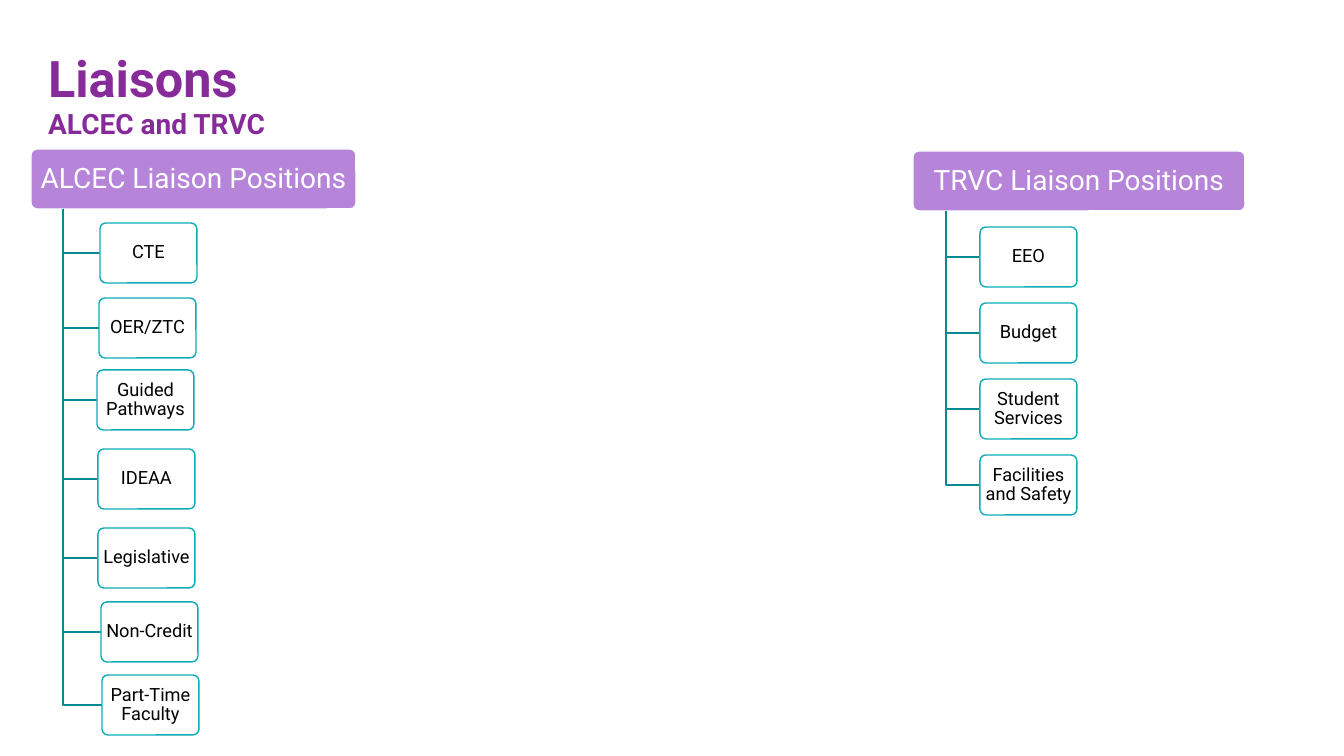
import dataclasses

import pptx
import pptx.dml.color
import pptx.enum.shapes
import pptx.enum.text
import pptx.oxml
import pptx.oxml.ns
import pptx.util

SCALE = 12192000 / 1344  # EMU in one px
BOX_W, BOX_H = 97, 60


@dataclasses.dataclass(frozen=True)
class Theme:
    font: str = "Roboto"
    title: str = "862B99"
    head: str = "B685DA"
    white: str = "FFFFFF"
    black: str = "000000"
    edge: str = "0EABB7"
    branch: str = "0B8993"
    title_size: int = 36
    head_size: int = 20
    box_size: int = 13


THEME = Theme()

STATE = [
    ("CTE", 100, 223),
    ("OER/ZTC", 99, 298),
    ("Guided Pathways", 97, 370),
    ("IDEAA", 98, 449),
    ("Legislative", 98, 528),
    ("Non-Credit", 101, 602),
    ("Part-Time Faculty", 102, 675),
]
CAMPUS = [
    (name, 980, 227 + 76 * row)
    for row, name in enumerate(
        ["EEO", "Budget", "Student Services", "Facilities and Safety"])
]


def px(count):
    return pptx.util.Emu(round(count * SCALE))


def rgb(color):
    return pptx.dml.color.RGBColor.from_string(color)


def style_text(para, size, color, bold=False, spacing=0.9):
    para.font.name = THEME.font
    para.font.size = pptx.util.Pt(size)
    para.font.color.rgb = rgb(color)
    para.font.bold = bold
    para.line_spacing = spacing


def style_line(shape, color):
    shape.shadow.inherit = False
    shape.line.color.rgb = rgb(color)
    shape.line.width = pptx.util.Pt(1)


def fill_holder(holder, text, place, size, spacing):
    """Move a placeholder, then set its left-aligned bold text."""
    holder.left, holder.top, holder.width, holder.height = map(px, place)
    frame = holder.text_frame
    frame.text = text
    frame.auto_size = pptx.enum.text.MSO_AUTO_SIZE.NONE
    para = frame.paragraphs[0]
    para.alignment = pptx.enum.text.PP_ALIGN.LEFT
    style_text(para, size, THEME.title, True, spacing)
    return para


def add_box(slide, text, place, size, color, fill, edge):
    box = slide.shapes.add_shape(
        pptx.enum.shapes.MSO_SHAPE.ROUNDED_RECTANGLE, *map(px, place))
    box.adjustments[0] = 0.1
    box.fill.solid()
    box.fill.fore_color.rgb = rgb(fill)
    style_line(box, edge)
    frame = box.text_frame
    frame.text = text
    frame.word_wrap = True
    frame.vertical_anchor = pptx.enum.text.MSO_ANCHOR.MIDDLE
    frame.margin_left = frame.margin_right = px(2)
    frame.margin_top = frame.margin_bottom = px(2)
    para = frame.paragraphs[0]
    para.alignment = pptx.enum.text.PP_ALIGN.CENTER
    style_text(para, size, color)


def add_branch(slide, left, top, right, bottom):
    """Draw an elbow that runs down and then right."""
    elbow = slide.shapes.build_freeform(left, top, scale=SCALE)
    elbow.add_line_segments([(left, bottom), (right, bottom)], close=False)
    branch = elbow.convert_to_shape()
    branch.fill.background()
    style_line(branch, THEME.branch)


def add_tree(slide, text, place, leaves):
    """Draw a heading with its liaisons hung below it."""
    left, top, width, height = place
    add_box(slide, text, place, THEME.head_size,
            THEME.white, THEME.head, THEME.white)
    trunk = left + round(width / 10)
    for name, leaf_x, leaf_y in leaves:
        add_branch(slide, trunk, top + height, leaf_x, leaf_y + BOX_H // 2)
        add_box(slide, name, (leaf_x, leaf_y, BOX_W, BOX_H), THEME.box_size,
                THEME.black, THEME.white, THEME.edge)


def main():
    deck = pptx.Presentation()
    deck.slide_width, deck.slide_height = px(1344), px(756)
    slide = deck.slides.add_slide(deck.slide_layouts[1])

    title = slide.shapes.title
    fill_holder(title, "Liaisons", (38, 34, 578, 94), THEME.title_size, 0.9)
    title.text_frame.vertical_anchor = pptx.enum.text.MSO_ANCHOR.MIDDLE
    para = fill_holder(slide.placeholders[1], "ALCEC and TRVC",
                       (38, 108, 395, 40), THEME.head_size, 0.8)
    para.space_before = pptx.util.Pt(9)
    props = para._p.get_or_add_pPr()
    props.set("marL", "0")
    props.set("indent", "0")
    bullet = pptx.oxml.parse_xml(
        "<a:buNone %s/>" % pptx.oxml.ns.nsdecls("a"))
    props.find(pptx.oxml.ns.qn("a:defRPr")).addprevious(bullet)

    add_tree(slide, "ALCEC Liaison Positions", (31, 149, 325, 60), STATE)
    add_tree(slide, "TRVC Liaison Positions", (913, 151, 332, 60), CAMPUS)
    deck.save("out.pptx")


if __name__ == "__main__":
    main()
